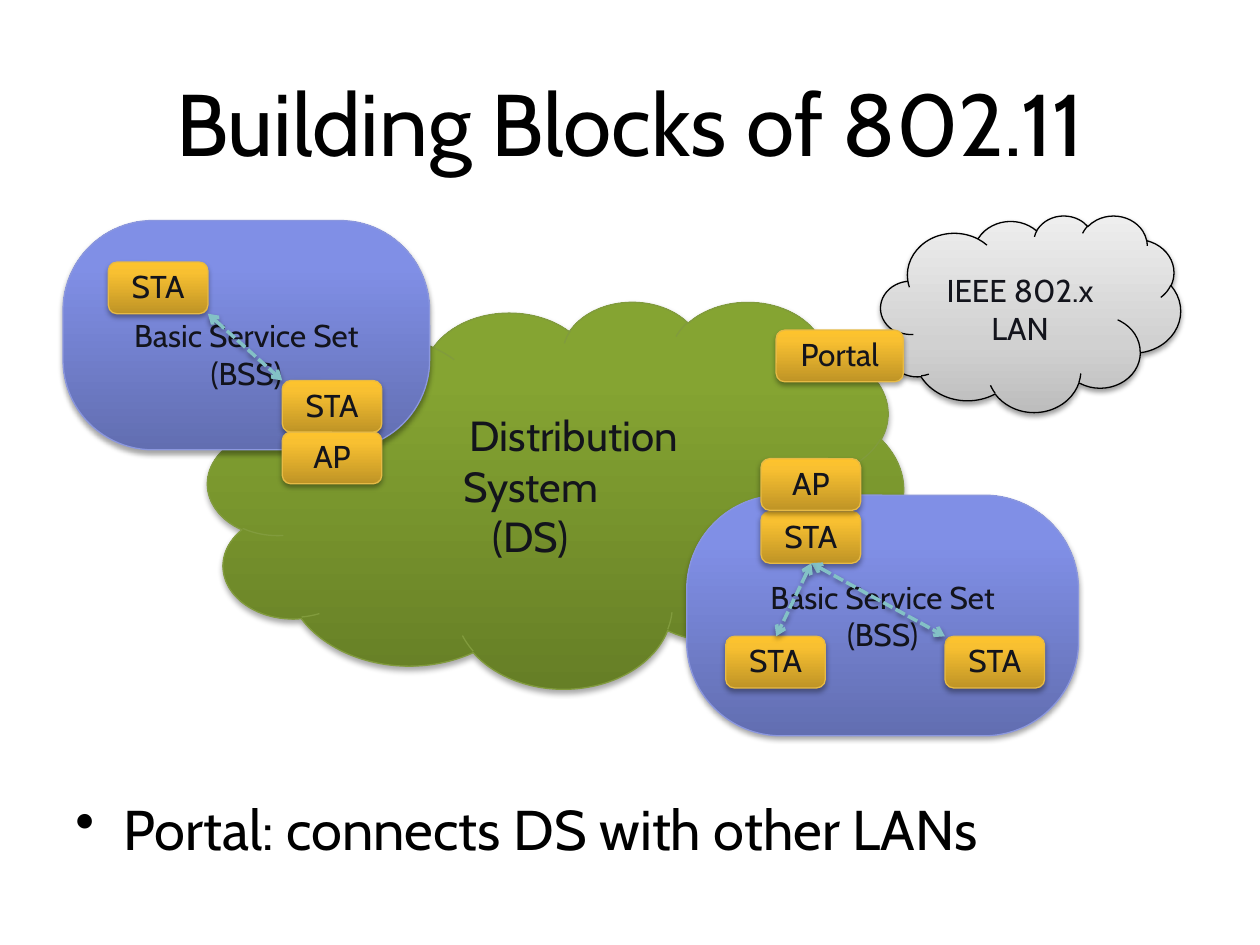
"""Build a slide showing the building blocks of an 802.11 network."""
from dataclasses import dataclass

from lxml.etree import SubElement
from pptx import Presentation
from pptx.dml.color import RGBColor
from pptx.enum.dml import MSO_LINE
from pptx.enum.shapes import MSO_CONNECTOR, MSO_SHAPE
from pptx.enum.text import MSO_ANCHOR, MSO_AUTO_SIZE, PP_ALIGN
from pptx.oxml.ns import qn
from pptx.util import Inches, Pt


@dataclass(frozen=True)
class Paint:
    stops: tuple[tuple[int, str], ...]
    line: str


@dataclass(frozen=True)
class Theme:
    font: str = "Cabin"
    heading: str = "000000"
    label: str = "13141C"
    link: str = "83C1C6"
    title_size: int = 50
    body_size: int = 32
    system_size: int = 24
    label_size: int = 18
    green: Paint = Paint(((0, "667F26"), (80, "85A432"), (100, "87A730")), "819B3D")
    blue: Paint = Paint(((0, "626EB1"), (80, "808FE6"), (100, "7E8EE9")), "8B97DE")
    amber: Paint = Paint(((0, "BF9426"), (80, "F8C031"), (100, "FDC32D")), "E7BA45")
    gray: Paint = Paint(((0, "BDBDBD"), (35, "D1D1D1"), (100, "EEEEEE")), "000000")


@dataclass(frozen=True)
class Block:
    preset: MSO_SHAPE
    left: float
    top: float
    width: float
    height: float
    paint: Paint
    lines: tuple[str, ...]
    size: int = 18
    anchor: MSO_ANCHOR = MSO_ANCHOR.MIDDLE
    corner: float | None = None
    side_margin: float = 0.1
    top_margin: float = 0.05
    first_indent: float = 0


@dataclass(frozen=True)
class Link:
    start: tuple[float, float]
    end: tuple[float, float]


THEME = Theme()


def node(text: str, left: float, top: float, width: float = 0.79) -> Block:
    """Describe a small amber station, access point or portal."""
    return Block(MSO_SHAPE.ROUNDED_RECTANGLE, left, top, width, 0.41,
                 THEME.amber, (text,), THEME.label_size, MSO_ANCHOR.BOTTOM)


def service_set(left: float, top: float, width: float, height: float,
                top_margin: float = 0.05) -> Block:
    """Describe a blue basic service set."""
    return Block(MSO_SHAPE.ROUNDED_RECTANGLE, left, top, width, height, THEME.blue,
                 ("Basic Service Set", "(BSS)"), THEME.label_size,
                 corner=0.392, top_margin=top_margin)


AREAS = (
    Block(MSO_SHAPE.CLOUD, 1.65, 2.39, 5.52, 3.07, THEME.green,
          ("Distribution System", "(DS)"), THEME.system_size,
          side_margin=0.25, first_indent=0.68),
    service_set(5.45, 3.93, 3.11, 1.91),
    service_set(0.5, 1.75, 2.91, 1.82, top_margin=0.35),
)
STATIONS = tuple(node("STA", left, top) for left, top in (
    (0.86, 2.08), (2.24, 3.02), (5.76, 5.05), (7.5, 5.05), (6.04, 4.06)))
LINKS = (
    Link((1.65, 2.49), (2.24, 3.02)),
    Link((6.44, 4.47), (7.5, 5.05)),
    Link((6.44, 4.47), (6.16, 5.05)),
)
GATEWAYS = (
    Block(MSO_SHAPE.CLOUD, 6.99, 1.71, 2.38, 1.56, THEME.gray,
          ("IEEE 802.x LAN",), THEME.label_size),
    node("AP", 2.24, 3.43),
    node("AP", 6.04, 3.64),
    node("Portal", 6.16, 2.62, 1.01),
)


def style_paragraph(paragraph, size: int, color: str, alignment: PP_ALIGN) -> None:
    """Set the font and alignment of a paragraph."""
    paragraph.alignment = alignment
    paragraph.font.name = THEME.font
    paragraph.font.size = Pt(size)
    paragraph.font.color.rgb = RGBColor.from_string(color)


def add_color(parent, color: str):
    """Append a colour element and return it."""
    return SubElement(parent, qn("a:srgbClr"), val=color)


def add_shadow(properties, distance: float, opacity: int) -> None:
    """Give shape properties a soft shadow falling straight down."""
    effects = properties.find(qn("a:effectLst"))
    if effects is None:
        effects = SubElement(properties, qn("a:effectLst"))
    shadow = SubElement(effects, qn("a:outerShdw"), blurRad=str(Pt(3.1)),
                        dist=str(Pt(distance)), dir="5400000", rotWithShape="0")
    SubElement(add_color(shadow, "000000"), qn("a:alpha"), val=str(opacity * 1000))


def paint_shape(shape, paint: Paint) -> None:
    """Fill a shape with a vertical gradient and outline it."""
    shape.fill.gradient()
    shape.fill.gradient_angle = 90
    stops = shape._element.spPr.find(qn("a:gradFill")).find(qn("a:gsLst"))
    for stop in list(stops):
        stops.remove(stop)
    for position, color in paint.stops:
        add_color(SubElement(stops, qn("a:gs"), pos=str(position * 1000)), color)
    shape.line.color.rgb = RGBColor.from_string(paint.line)
    shape.line.width = Pt(0.75)


def add_block(slide, block: Block) -> None:
    """Draw one labelled block."""
    shape = slide.shapes.add_shape(block.preset, Inches(block.left), Inches(block.top),
                                   Inches(block.width), Inches(block.height))
    if block.corner is not None:
        shape.adjustments[0] = block.corner
    paint_shape(shape, block.paint)
    shape.shadow.inherit = False
    is_gray = block.paint == THEME.gray
    add_shadow(shape._element.spPr, 1.6 if is_gray else 1.8, 38 if is_gray else 35)
    frame = shape.text_frame
    frame.word_wrap = True
    frame.vertical_anchor = block.anchor
    frame.margin_left = frame.margin_right = Inches(block.side_margin)
    frame.margin_top = Inches(block.top_margin)
    frame.text = "\n".join(block.lines)
    for paragraph in frame.paragraphs:
        style_paragraph(paragraph, block.size, THEME.label, PP_ALIGN.CENTER)
    if block.first_indent:
        properties = frame.paragraphs[0]._p.get_or_add_pPr()
        properties.set("indent", str(Inches(block.first_indent)))


def add_link(slide, link: Link) -> None:
    """Draw a dashed arrow with a head at each end."""
    connector = slide.shapes.add_connector(
        MSO_CONNECTOR.STRAIGHT, *map(Inches, link.start + link.end))
    connector.line.color.rgb = RGBColor.from_string(THEME.link)
    connector.line.width = Pt(2)
    connector.line.dash_style = MSO_LINE.SQUARE_DOT
    properties = connector._element.spPr
    for end in ("a:headEnd", "a:tailEnd"):
        SubElement(properties.find(qn("a:ln")), qn(end), type="arrow")
    add_shadow(properties, 1.6, 38)


def add_title(slide, text: str) -> None:
    """Place and format the slide title."""
    title = slide.shapes.title
    title.left, title.top, title.width, title.height = map(Inches, (0.5, 0.5, 9, 1.25))
    frame = title.text_frame
    frame.text = text
    frame.auto_size = MSO_AUTO_SIZE.NONE
    frame.vertical_anchor = MSO_ANCHOR.TOP
    style_paragraph(frame.paragraphs[0], THEME.title_size, THEME.heading, PP_ALIGN.CENTER)


def add_bullet(slide, text: str) -> None:
    """Write the bulleted statement below the diagram."""
    box = slide.shapes.add_textbox(*map(Inches, (0.5, 5.73, 9, 1.42)))
    frame = box.text_frame
    frame.word_wrap = True
    frame.vertical_anchor = MSO_ANCHOR.MIDDLE
    frame.text = text
    paragraph = frame.paragraphs[0]
    style_paragraph(paragraph, THEME.body_size, THEME.heading, PP_ALIGN.LEFT)
    paragraph.line_spacing = 1.5
    properties = paragraph._p.get_or_add_pPr()
    properties.set("marL", str(Inches(0.38)))
    properties.set("indent", str(Inches(-0.38)))
    bullet = SubElement(properties, qn("a:buChar"), char="•")
    properties.find(qn("a:defRPr")).addprevious(bullet)


def main() -> None:
    """Assemble and save the presentation."""
    presentation = Presentation()
    presentation.slide_width, presentation.slide_height = Inches(10), Inches(7.5)
    slide = presentation.slides.add_slide(presentation.slide_layouts[5])
    add_title(slide, "Building Blocks of 802.11")
    for block in AREAS:
        add_block(slide, block)
    add_bullet(slide, "Portal: connects DS with other LANs")
    for block in STATIONS:
        add_block(slide, block)
    for link in LINKS:
        add_link(slide, link)
    for block in GATEWAYS:
        add_block(slide, block)
    presentation.save("out.pptx")


if __name__ == "__main__":
    main()
